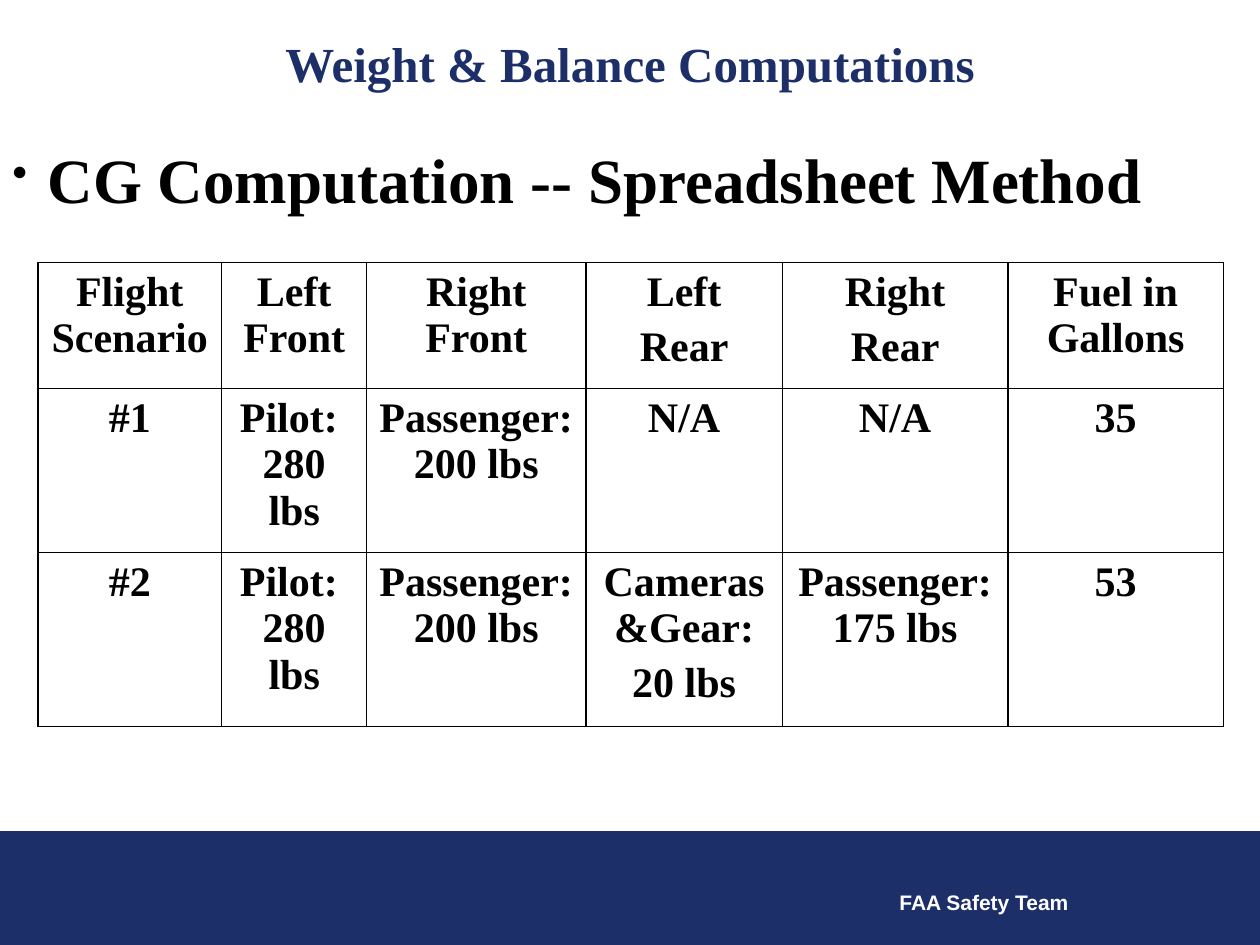
from lxml import etree
from pptx import Presentation
from pptx.dml.color import RGBColor
from pptx.enum.shapes import MSO_SHAPE
from pptx.enum.text import MSO_ANCHOR, PP_ALIGN
from pptx.oxml.ns import qn
from pptx.util import Inches, Pt

RECTANGLE = MSO_SHAPE.RECTANGLE
MIDDLE = MSO_ANCHOR.MIDDLE
CENTER = PP_ALIGN.CENTER

WIDTH, HEIGHT = 10, 7.5
TITLE_ONLY = 5
COLORS = {"navy": "1D2F68", "black": "000000", "white": "FFFFFF"}
SERIF, SANS = "Times New Roman", "Arial"


class SlideBuilder:
    """Holds the style and the slide; lengths are shares of the slide's size."""

    def __init__(self, deck):
        self.slide = deck.slides.add_slide(deck.slide_layouts[TITLE_ONLY])

    def color(self, name):
        return RGBColor.from_string(COLORS[name])

    def box(self, x, y, w, h):
        return (Inches(x * WIDTH), Inches(y * HEIGHT),
                Inches(w * WIDTH), Inches(h * HEIGHT))

    def style(self, paragraph, size, color, face=SERIF):
        font = paragraph.font
        font.name, font.size, font.bold = face, Pt(size), True
        font.color.rgb = self.color(color)

    def title(self, text, *place):
        title = self.slide.shapes.title
        title.left, title.top, title.width, title.height = self.box(*place)
        frame = title.text_frame
        frame.text = text
        frame.vertical_anchor = MIDDLE
        frame.paragraphs[0].alignment = CENTER
        self.style(frame.paragraphs[0], 28, "navy")

    def band(self, color, *place):
        band = self.slide.shapes.add_shape(RECTANGLE, *self.box(*place))
        band.shadow.inherit = False
        band.fill.solid()
        band.fill.fore_color.rgb = self.color(color)
        band.line.color.rgb = self.color(color)
        band.line.width = Pt(0.75)

    def text(self, text, *place, size, color, face=SERIF, wrap=True):
        frame = self.slide.shapes.add_textbox(*self.box(*place)).text_frame
        frame.word_wrap = wrap
        paragraph = frame.paragraphs[0]
        paragraph.text = text
        self.style(paragraph, size, color, face)
        return paragraph

    def bullet(self, text, *place, size, color):
        paragraph = self.text(text, *place, size=size, color=color)
        props = paragraph._p.get_or_add_pPr()
        indent = Inches(0.28)
        props.set("marL", str(indent))
        props.set("indent", str(-indent))
        marks = (("a:buSzPct", "val", "70000"), ("a:buChar", "char", "•"))
        for position, (tag, key, value) in enumerate(marks):
            mark = etree.Element(qn(tag))
            mark.set(key, value)
            props.insert(position, mark)

    def border(self, cell, color):
        props = cell._tc.get_or_add_tcPr()
        for side in ("a:lnL", "a:lnR", "a:lnT", "a:lnB"):
            line = etree.SubElement(props, qn(side), w=str(Pt(1)))
            fill = etree.SubElement(line, qn("a:solidFill"))
            etree.SubElement(fill, qn("a:srgbClr"), val=COLORS[color])

    def table(self, rows, widths, heights, *place):
        table = self.slide.shapes.add_table(
            len(rows), len(widths), *self.box(*place)).table
        table.first_row = table.horz_banding = False
        for column, width in zip(table.columns, widths):
            column.width = Inches(width)
        for row, height, entries in zip(table.rows, heights, rows):
            row.height = Inches(height)
            for cell, entry in zip(row.cells, entries):
                self.border(cell, "black")
                cell.fill.background()
                cell.text = entry
                for number, paragraph in enumerate(cell.text_frame.paragraphs):
                    paragraph.alignment = CENTER
                    if number:
                        paragraph.space_before = Pt(4.8)
                    self.style(paragraph, 24, "black")


def main():
    deck = Presentation()
    deck.slide_width, deck.slide_height = Inches(WIDTH), Inches(HEIGHT)
    page = SlideBuilder(deck)

    # Footer
    page.band("navy", 0, 0.88, 1, 0.12)
    page.text("FAA Safety Team", 0.704, 0.935, 0.156, 0.04,
              size=12, color="white", face=SANS, wrap=False)

    # Headings
    page.title("Weight & Balance Computations", 0, 0, 1, 1 / HEIGHT)
    page.bullet("CG Computation -- Spreadsheet Method", 0, 0.142, 1, 0.1,
                size=36, color="black")

    # Loading scenarios: \v breaks a line, \n starts a paragraph
    pilot, passenger = "Pilot: \v280 lbs", "Passenger: 200 lbs"
    scenarios = [
        ["Flight\vScenario", "Left Front", "Right\vFront",
         "Left\nRear", "Right\nRear", "Fuel in\vGallons"],
        ["#1", pilot, passenger, "N/A", "N/A", "35"],
        ["#2", pilot, passenger, "Cameras &Gear:\n20 lbs",
         "Passenger: 175 lbs", "53"],
    ]
    page.table(scenarios, [1.46, 1.15, 1.74, 1.56, 1.79, 1.71],
               [1, 1.3, 1.38], 0.03, 0.278, 0.94, 0.49)

    deck.save("out.pptx")


if __name__ == "__main__":
    main()
